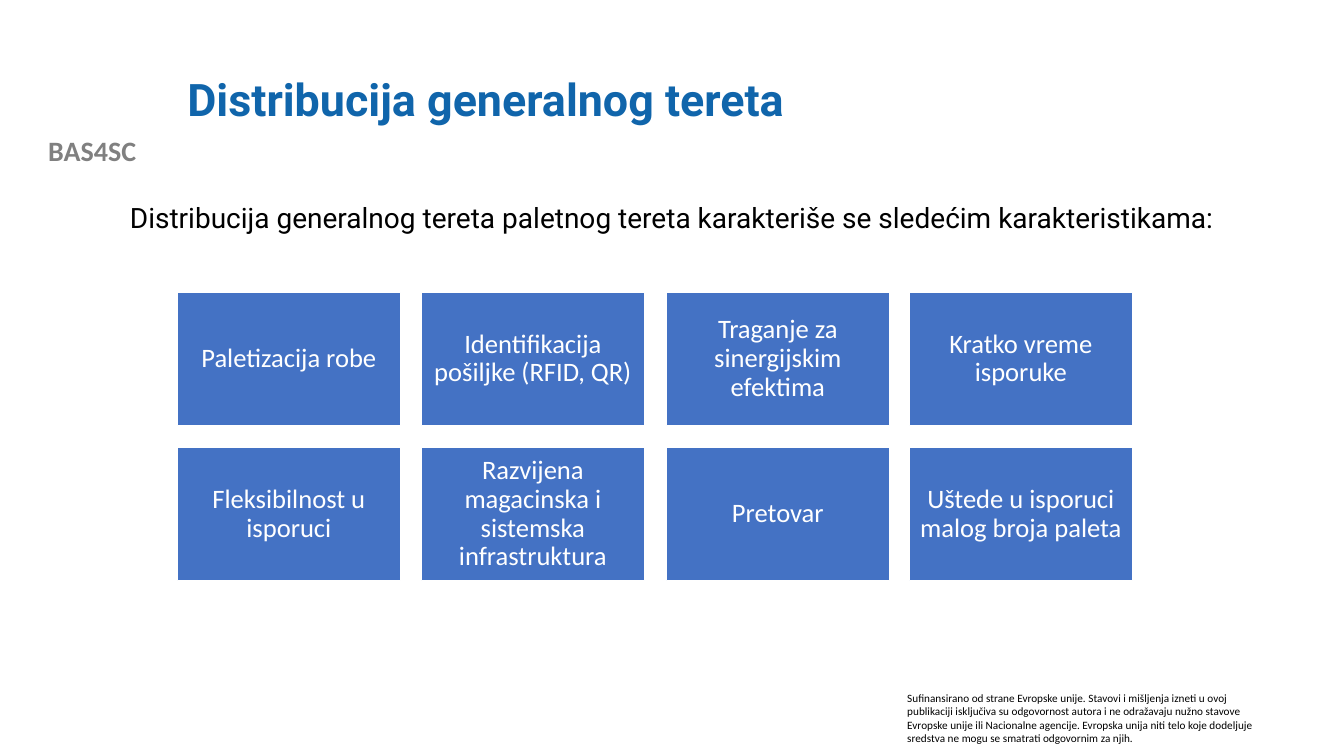
from pptx import Presentation
from pptx.dml.color import RGBColor
from pptx.enum.shapes import MSO_SHAPE
from pptx.enum.text import MSO_ANCHOR, PP_ALIGN
from pptx.util import Pt

EMU_PER_PX = 9144
RECTANGLE = MSO_SHAPE.RECTANGLE
TOP, MIDDLE = MSO_ANCHOR.TOP, MSO_ANCHOR.MIDDLE
LEFT, CENTER = PP_ALIGN.LEFT, PP_ALIGN.CENTER

WHITE = "FFFFFF"
TILE_BLUE = "4472C4"

PROJECT = {"name": "Calibri", "size": Pt(20), "bold": True}
DISCLAIMER = {"name": "Calibri", "size": Pt(8)}
TITLE = {"name": "Roboto", "size": Pt(32), "bold": True}
INTRO = {"name": "Roboto", "size": Pt(20)}
FEATURE = {"name": "Calibri", "size": Pt(19)}

FEATURES = [
    "Paletizacija robe",
    "Identifikacija pošiljke (RFID, QR)",
    "Traganje za sinergijskim efektima",
    "Kratko vreme isporuke",
    "Fleksibilnost u isporuci",
    "Razvijena magacinska i sistemska infrastruktura",
    "Pretovar",
    "Uštede u isporuci malog broja paleta",
]
COLUMNS = 4
GRID_LEFT, GRID_TOP = 176, 290
TILE_WIDTH, TILE_HEIGHT = 221, 132
TILE_GAP = 22
TILE_INSET = 8


def px(length):
    return length * EMU_PER_PX


def color(hex_code):
    return RGBColor.from_string(hex_code)


def set_all(target, values):
    for name, value in values.items():
        setattr(target, name, value)


def write(frame, text, style, hex_code, align=LEFT, anchor=TOP, spacing=1.0):
    set_all(frame, {"word_wrap": True, "vertical_anchor": anchor})
    paragraph = frame.paragraphs[0]
    set_all(paragraph, {"alignment": align, "line_spacing": spacing})
    run = paragraph.add_run()
    run.text = text
    set_all(run.font, style)
    run.font.color.rgb = color(hex_code)


def add_text(slide, box, *content, **layout):
    label = slide.shapes.add_textbox(*map(px, box))
    write(label.text_frame, *content, **layout)


def add_tile(slide, box, text):
    tile = slide.shapes.add_shape(RECTANGLE, *map(px, box))
    tile.shadow.inherit = False
    tile.fill.solid()
    tile.fill.fore_color.rgb = color(TILE_BLUE)
    tile.line.color.rgb = color(WHITE)
    tile.line.width = Pt(1)
    for side in ("left", "top", "right", "bottom"):
        setattr(tile.text_frame, f"margin_{side}", px(TILE_INSET))
    write(tile.text_frame, text, FEATURE, WHITE,
          align=CENTER, anchor=MIDDLE, spacing=0.9)


def add_feature_grid(slide):
    for index, feature in enumerate(FEATURES):
        row, column = divmod(index, COLUMNS)
        left = GRID_LEFT + column * (TILE_WIDTH + TILE_GAP - 1)
        left += column // 2 * (column < 3)
        top = GRID_TOP + row * (TILE_HEIGHT + TILE_GAP)
        add_tile(slide, (left, top, TILE_WIDTH, TILE_HEIGHT), feature)


def main():
    deck = Presentation()
    set_all(deck, {"slide_width": px(1333), "slide_height": px(750)})
    slide = deck.slides.add_slide(deck.slide_layouts[6])
    add_text(slide, (0, 128, 183, 44), "BAS4SC", PROJECT, "808080", align=CENTER)
    add_text(
        slide, (890, 681, 370, 64),
        "Sufinansirano od strane Evropske unije. Stavovi i mišljenja izneti u ovoj "
        "publikaciji isključiva su odgovornost autora i ne odražavaju nužno stavove "
        "Evropske unije ili Nacionalne agencije. Evropska unija niti telo koje "
        "dodeljuje sredstva ne mogu se smatrati odgovornim za njih.",
        DISCLAIMER, "000000",
    )
    add_text(slide, (176, 40, 1066, 122), "Distribucija generalnog tereta",
             TITLE, "1065AB", anchor=MIDDLE, spacing=0.9)
    add_text(
        slide, (119, 198, 1150, 440),
        "Distribucija generalnog tereta paletnog tereta karakteriše se sledećim "
        "karakteristikama:",
        INTRO, "000000", spacing=0.9,
    )
    add_feature_grid(slide)
    deck.save("out.pptx")


if __name__ == "__main__":
    main()
